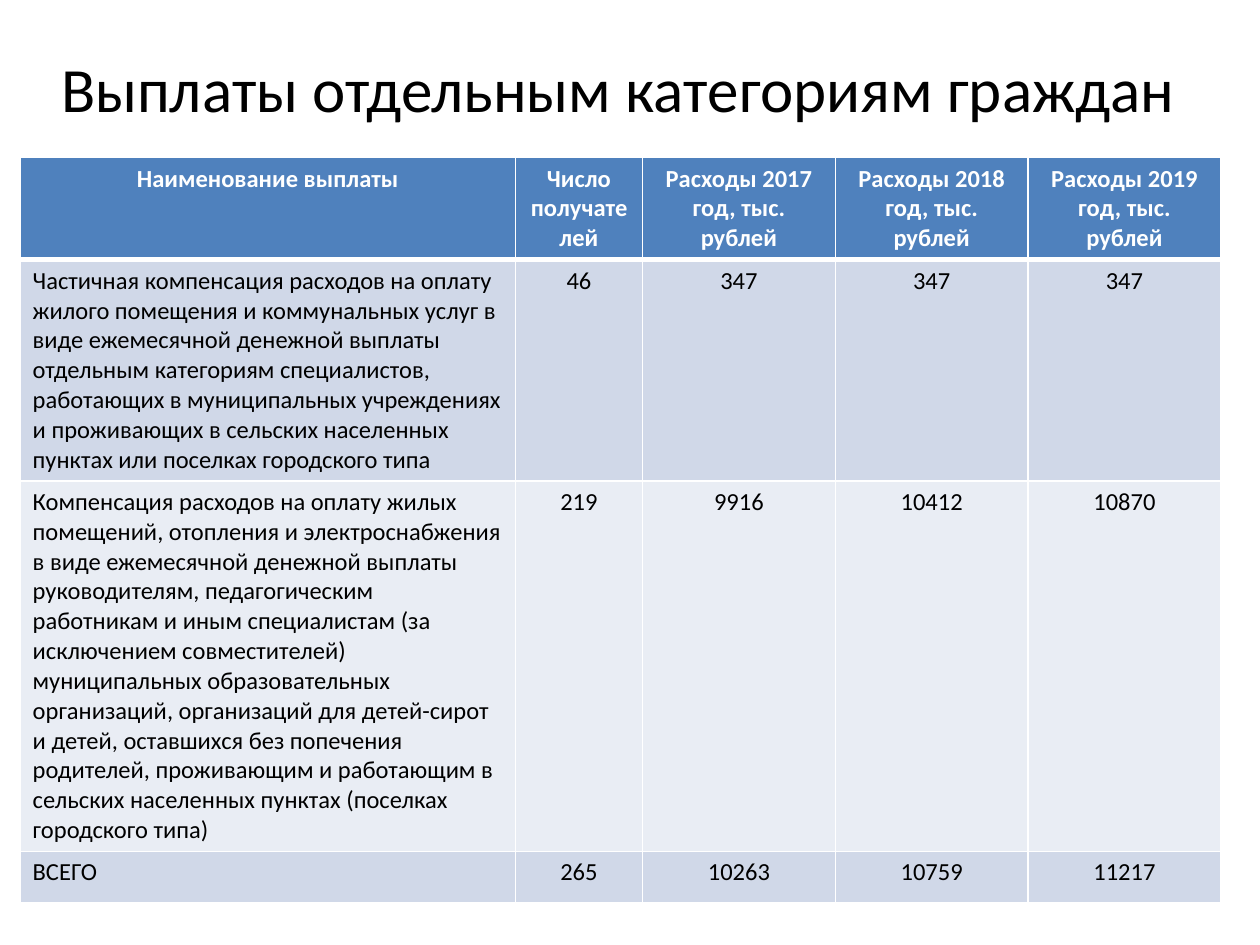
from lxml.etree import SubElement
from pptx import Presentation
from pptx.dml.color import RGBColor
from pptx.enum.text import MSO_ANCHOR, PP_ALIGN
from pptx.oxml.ns import qn
from pptx.util import Inches, Pt

FONT = "Calibri"
BLACK = RGBColor(0x00, 0x00, 0x00)
WHITE = RGBColor(0xFF, 0xFF, 0xFF)
HEADER_BLUE = RGBColor(0x4F, 0x81, 0xBD)
BANDS = (RGBColor(0xE9, 0xED, 0xF4), RGBColor(0xD0, 0xD8, 0xE8))

TITLE = "Выплаты отдельным категориям граждан"
HEADER = ["Наименование выплаты", "Число получателей"] + [
    f"Расходы {year} год, тыс. рублей" for year in (2017, 2018, 2019)
]
PAYMENTS = [
    ("Частичная компенсация расходов на оплату жилого помещения и коммунальных "
     "услуг в виде ежемесячной денежной выплаты отдельным категориям "
     "специалистов, работающих в муниципальных учреждениях и проживающих в "
     "сельских населенных пунктах или поселках городского типа",
     46, 347, 347, 347),
    ("Компенсация расходов на оплату жилых помещений, отопления и "
     "электроснабжения в виде ежемесячной денежной выплаты руководителям, "
     "педагогическим работникам и иным специалистам (за исключением "
     "совместителей) муниципальных образовательных организаций, организаций "
     "для детей-сирот и детей, оставшихся без попечения родителей, "
     "проживающим и работающим в сельских населенных пунктах (поселках "
     "городского типа)",
     219, 9916, 10412, 10870),
    ("ВСЕГО", 265, 10263, 10759, 11217),
]
COLUMN_WIDTHS = [3.93, 1.01] + [1.53] * 3
ROW_HEIGHTS = [0.81, 1.75, 2.94, 0.41]


def format_text(frame, size, color, align, bold=False):
    for para in frame.paragraphs:
        para.alignment = align
        for span in para.runs:
            font = span.font
            font.name, font.size, font.bold = FONT, Pt(size), bold
            font.color.rgb = color


def set_borders(cell, bottom):
    """Draw white cell edges; they must precede the fill in the cell XML."""
    properties = cell._tc.get_or_add_tcPr()
    for side, width in (("L", 1), ("R", 1), ("T", 1), ("B", bottom)):
        line = SubElement(properties, qn(f"a:ln{side}"), w=str(Pt(width)))
        fill = SubElement(line, qn("a:solidFill"))
        SubElement(fill, qn("a:srgbClr"), val=str(WHITE))


def place_title(page, left, top, width, height):
    title = page.shapes.title
    title.left, title.top = Inches(left), Inches(top)
    title.width, title.height = Inches(width), Inches(height)
    frame = title.text_frame
    frame.text = TITLE
    frame.word_wrap = True
    frame.vertical_anchor = MSO_ANCHOR.MIDDLE
    format_text(frame, 36, BLACK, PP_ALIGN.CENTER)


def place_payments_table(page, left, top):
    rows = [HEADER, *PAYMENTS]
    table = page.shapes.add_table(
        len(rows), len(HEADER), Inches(left), Inches(top),
        Inches(sum(COLUMN_WIDTHS)), Inches(sum(ROW_HEIGHTS)),
    ).table
    for column, width in zip(table.columns, COLUMN_WIDTHS):
        column.width = Inches(width)
    for row, height in zip(table.rows, ROW_HEIGHTS):
        row.height = Inches(height)

    for r, values in enumerate(rows):
        is_header = r == 0
        for c, value in enumerate(values):
            cell = table.cell(r, c)
            cell.text = str(value)
            set_borders(cell, bottom=3 if is_header else 1)
            cell.fill.solid()
            cell.fill.fore_color.rgb = HEADER_BLUE if is_header else BANDS[r % 2]
            centred = is_header or c > 0
            format_text(cell.text_frame, 14, WHITE if is_header else BLACK,
                        PP_ALIGN.CENTER if centred else PP_ALIGN.LEFT, is_header)


def main():
    deck = Presentation()
    deck.slide_width, deck.slide_height = Inches(10), Inches(7.5)
    page = deck.slides.add_slide(deck.slide_layouts[5])  # title only

    # Heading
    place_title(page, 0.31, 0.3, 9.19, 0.79)
    # Payments by year
    place_payments_table(page, 0.16, 1.25)

    deck.save("out.pptx")


if __name__ == "__main__":
    main()
